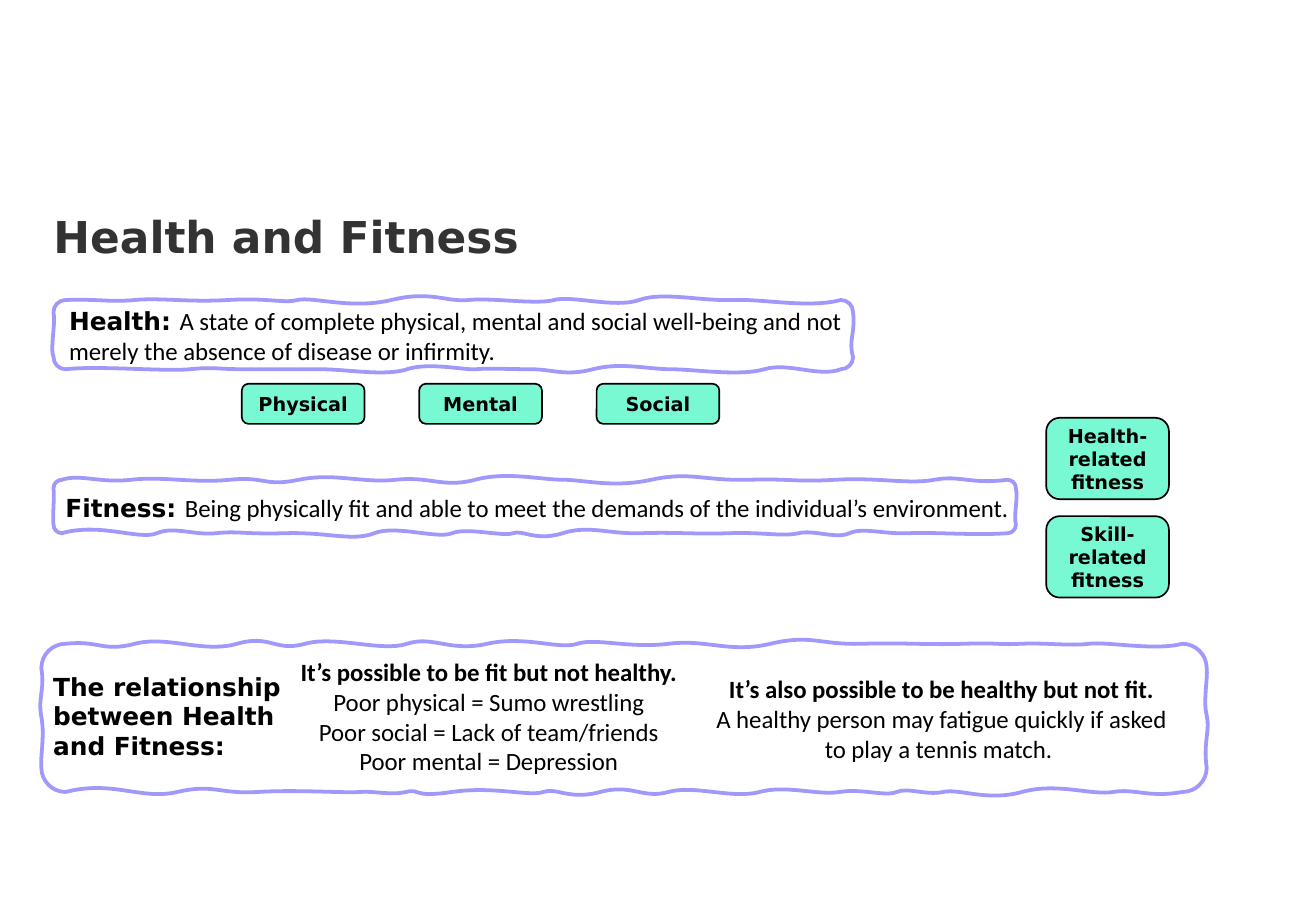
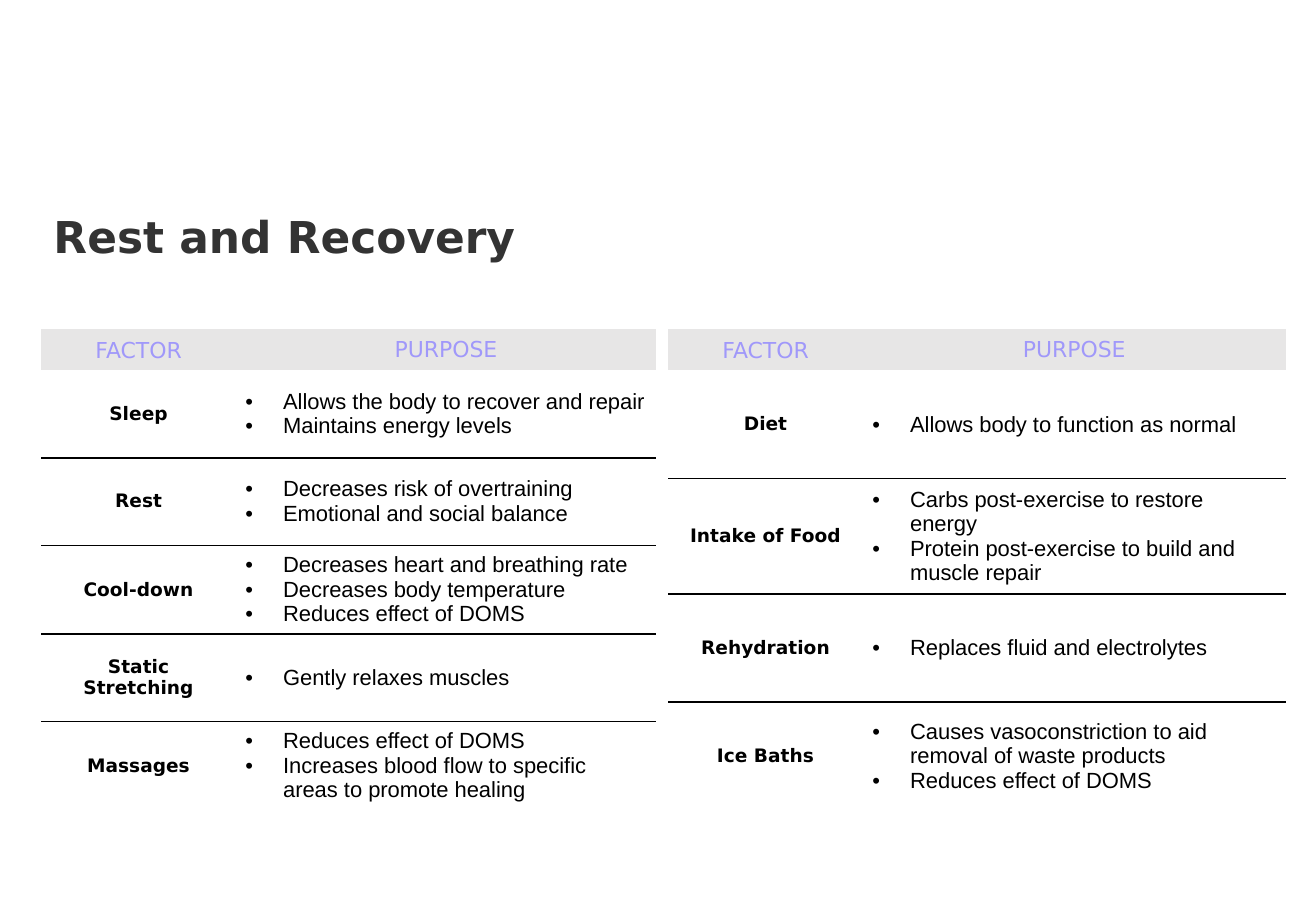
from lxml import etree
from pptx import Presentation
from pptx.dml.color import RGBColor
from pptx.enum import shapes, text
from pptx.oxml import ns
from pptx.util import Inches, Pt

# Shared look
BLACK = RGBColor(0x00, 0x00, 0x00)
DARK_GREY = RGBColor(0x33, 0x33, 0x33)
LIGHT_GREY = RGBColor(0xE7, 0xE6, 0xE6)
LILAC = RGBColor(0xA0, 0x98, 0xFA)
MINT = RGBColor(0x78, 0xF9, 0xD4)
HEADING_FONT, BODY_FONT, TABLE_FONT = "DejaVu Sans", "Calibri", "Arial"
BODY_SIZE = 14.63
CENTER = text.PP_ALIGN.CENTER
MIDDLE = text.MSO_ANCHOR.MIDDLE

# Frames: box, corner radius, then the top, right, bottom and left edges, clockwise.
# An edge is its first handle (position, outward offset) and smooth segments
# (second handle position, outward offset, end position).
HEALTH_FRAME = (0.44, 2.47, 7.02, 3.04), 0.1, [
    ((0.81, 0.01), [(0.9, -0.02, 1.11), (1.55, -0.02, 1.88), (2.33, -0.03, 2.45),
                    (2.89, -0.08, 3.22), (3.67, -0.02, 3.86), (4.42, -0.04, 4.56),
                    (5.07, -0.07, 5.26), (5.77, -0.01, 6.03), (6.65, -0.07, 6.92)]),
    ((2.75, 0.02), [(2.8, -0.04, 2.94)]),
    ((6.74, 0.07), [(6.49, -0.06, 6.29), (5.71, 0, 5.52), (5.11, -0.06, 4.88),
                    (4.55, 0, 4.37), (4.01, -0.01, 3.92), (3.53, -0.06, 3.35),
                    (2.85, 0, 2.64), (2.21, 0, 2), (1.76, -0.02, 1.56),
                    (0.8, -0.03, 0.54)]),
    ((2.87, 0.03), [(2.66, -0.02, 2.57)]),
]
FITNESS_FRAME = (0.44, 3.95, 8.36, 4.39), 0.07, [
    ((0.66, 0.05), [(0.82, -0.03, 1.08), (1.59, -0.03, 1.89), (2.17, -0.06, 2.46),
                    (2.98, -0.03, 3.26), (3.65, -0.07, 3.91), (4.45, 0, 4.63),
                    (5.04, -0.07, 5.36), (5.79, -0.01, 6.16), (6.52, -0.02, 6.88),
                    (7.48, -0.04, 7.69), (7.99, -0.04, 8.29)]),
    ((4.11, 0.02), [(4.23, -0.02, 4.32)]),
    ((8.02, 0.02), [(7.68, -0.01, 7.48), (7.1, -0.05, 6.99), (6.7, -0.03, 6.57),
                    (6.28, -0.01, 6), (5.55, -0.01, 5.28), (4.85, -0.07, 4.63),
                    (4.3, -0.03, 4.22), (3.84, -0.05, 3.72), (3.26, -0.07, 3.08),
                    (2.7, -0.01, 2.35), (1.96, -0.02, 1.78), (1.43, -0.06, 1.29),
                    (0.82, -0.09, 0.51)]),
    ((4.25, 0.01), [(4.1, -0.01, 4.02)]),
]
RELATIONSHIP_FRAME = (0.34, 5.3, 9.93, 6.52), 0.2, [
    ((0.82, 0.03), [(0.84, -0.07, 1.11), (1.67, -0.08, 1.95), (2.26, -0.07, 2.51),
                    (3.14, -0.07, 3.35), (3.7, -0.07, 4.01), (4.6, -0.05, 4.75),
                    (5.18, -0.04, 5.5), (6, -0.08, 6.34), (6.74, -0.01, 7.09),
                    (7.63, -0.01, 7.93), (8.2, -0.01, 8.4), (8.81, -0.02, 8.96),
                    (9.5, -0.06, 9.73)]),
    ((5.59, 0.01), [(5.77, -0.03, 5.89), (6.11, -0.03, 6.32)]),
    ((9.45, 0.05), [(9.34, -0.03, 9.16), (8.7, -0.08, 8.41), (7.9, -0.03, 7.76),
                    (7.47, -0.04, 7.38), (7.09, -0.03, 6.91), (6.47, -0.06, 6.25),
                    (5.71, -0.06, 5.5), (5.2, -0.07, 4.94), (4.58, -0.04, 4.47),
                    (4.06, -0.05, 3.72), (3.47, -0.03, 3.34), (3.08, -0.01, 2.96),
                    (2.44, -0.02, 2.12), (1.76, -0.07, 1.46), (0.93, -0.1, 0.54)]),
    ((6.23, 0.01), [(6.06, -0.03, 5.9), (5.68, -0.03, 5.5)]),
]

# Table contents: row height, factor, purposes
LEFT_ROWS = [
    (0.72, "Sleep", ["Allows the body to recover and repair", "Maintains energy levels"]),
    (0.72, "Rest", ["Decreases risk of overtraining", "Emotional and social balance"]),
    (0.73, "Cool-down", ["Decreases heart and breathing rate",
                         "Decreases body temperature", "Reduces effect of DOMS"]),
    (0.72, "Static Stretching", ["Gently relaxes muscles"]),
    (0.73, "Massages", ["Reduces effect of DOMS",
                        "Increases blood flow to specific areas to promote healing"]),
]
RIGHT_ROWS = [
    (0.89, "Diet", ["Allows body to function as normal"]),
    (0.95, "Intake of Food", ["Carbs post-exercise to restore energy",
                              "Protein post-exercise to build and muscle repair"]),
    (0.89, "Rehydration", ["Replaces fluid and electrolytes"]),
    (0.89, "Ice Baths", ["Causes vasoconstriction to aid removal of waste products",
                         "Reduces effect of DOMS"]),
]


# Text
def add_run(paragraph, content, size=BODY_SIZE, font=BODY_FONT, color=BLACK, bold=False):
    run = paragraph.add_run()
    run.text = content
    run.font.size, run.font.name = Pt(size), font
    run.font.bold, run.font.color.rgb = bold, color


def fill_frame(frame, paragraphs, align=None, bulleted=False):
    """Each paragraph is a list of (text, format) runs."""
    frame.word_wrap = True
    for index, runs in enumerate(paragraphs):
        paragraph = frame.add_paragraph() if index else frame.paragraphs[0]
        paragraph.alignment = align
        if bulleted:
            add_bullet(paragraph)
        for content, style in runs:
            add_run(paragraph, content, **style)


def add_bullet(paragraph):
    properties = paragraph._p.get_or_add_pPr()
    properties.set("marL", str(Inches(0.31)))
    properties.set("indent", str(-Inches(0.31)))
    etree.SubElement(properties, ns.qn("a:buFont")).set("typeface", "Arial")
    etree.SubElement(properties, ns.qn("a:buChar")).set("char", "•")


def add_text(slide, box, paragraphs, align=None):
    shape = slide.shapes.add_textbox(*map(Inches, box))
    shape.text_frame.auto_size = text.MSO_AUTO_SIZE.SHAPE_TO_FIT_TEXT
    fill_frame(shape.text_frame, paragraphs, align)


def add_titled_slide(presentation, title, width):
    slide = presentation.slides.add_slide(presentation.slide_layouts[5])
    shape = slide.shapes.title
    shape.left, shape.top = Inches(0.34), Inches(1.68)
    shape.width, shape.height = Inches(width), Inches(0.54)
    frame = shape.text_frame
    frame.auto_size = text.MSO_AUTO_SIZE.SHAPE_TO_FIT_TEXT
    frame.vertical_anchor = text.MSO_ANCHOR.TOP
    style = dict(size=26, font=HEADING_FONT, color=DARK_GREY, bold=True)
    fill_frame(frame, [[(title, style)]], text.PP_ALIGN.LEFT)
    return slide


# Shapes
def add_tag(slide, label, left, top, height):
    shape = slide.shapes.add_shape(shapes.MSO_SHAPE.ROUNDED_RECTANGLE,
                                   *map(Inches, (left, top, 1.01, height)))
    shape.shadow.inherit = False
    shape.fill.solid()
    shape.fill.fore_color.rgb = MINT
    shape.line.color.rgb, shape.line.width = BLACK, Pt(1)
    shape.text_frame.vertical_anchor = MIDDLE
    style = dict(size=11.4, font=HEADING_FONT, bold=True)
    fill_frame(shape.text_frame, [[(label, style)]], CENTER)


def toward(point, target, share=0.55):
    return tuple(a + share * (b - a) for a, b in zip(point, target))


def wavy_curves(box, radius, edges):
    """Cubic curves (first handle, second handle, end) around the box."""
    left, top, right, bottom = box
    # Fixed coordinate, outward sign, horizontal?, end corner, point after that corner
    sides = [(top, -1, True, (right, top), (right, top + radius)),
             (right, 1, False, (right, bottom), (right - radius, bottom)),
             (bottom, 1, True, (left, bottom), (left, bottom - radius)),
             (left, -1, False, (left, top), (left + radius, top))]
    for (base, sign, horizontal, corner, after), (handle, segments) in zip(sides, edges):
        def place(position, offset=0):
            across = base + sign * offset
            return (position, across) if horizontal else (across, position)

        first = place(*handle)
        for position, offset, end in segments:
            second, point = place(position, offset), place(end)
            yield first, second, point
            first = toward(second, point, 2)
        yield toward(point, corner), toward(after, corner), after


def add_wavy_frame(slide, box, radius, edges):
    curves = list(wavy_curves(box, radius, edges))
    start = curves[-1][-1]
    builder = slide.shapes.build_freeform(*map(Inches, start), scale=1.0)
    builder.add_line_segments([tuple(map(Inches, curve[-1])) for curve in curves])
    shape = builder.convert_to_shape()
    # Bend each straight segment into its cubic curve
    for line, curve in zip(list(shape._element.iter(ns.qn("a:lnTo"))), curves):
        bend = etree.Element(ns.qn("a:cubicBezTo"))
        for x, y in curve:
            etree.SubElement(bend, ns.qn("a:pt"), x=str(Inches(x) - shape.left),
                             y=str(Inches(y) - shape.top))
        line.getparent().replace(line, bend)
    shape.shadow.inherit = False
    shape.fill.background()
    shape.line.color.rgb, shape.line.width = LILAC, Pt(2.25)


# Tables
def set_borders(cell, ruled_sides):
    properties = cell._tc.get_or_add_tcPr()
    for index, side in enumerate("LRTB"):
        line = etree.Element(ns.qn("a:ln" + side), w=str(Pt(1)))
        if side in ruled_sides:
            fill = etree.SubElement(line, ns.qn("a:solidFill"))
            etree.SubElement(fill, ns.qn("a:srgbClr")).set("val", str(BLACK))
        else:
            etree.SubElement(line, ns.qn("a:noFill"))
        properties.insert(index, line)


def fill_cell(cell, paragraphs, align=None, bulleted=False, fill=None, ruled_sides=""):
    cell.vertical_anchor = MIDDLE
    cell.margin_left = cell.margin_right = Inches(0.08)
    cell.margin_top = cell.margin_bottom = Inches(0.04)
    if fill is None:
        cell.fill.background()
    else:
        cell.fill.solid()
        cell.fill.fore_color.rgb = fill
    set_borders(cell, ruled_sides)
    fill_frame(cell.text_frame, paragraphs, align, bulleted)


def add_factor_table(slide, left, purpose_width, rows):
    widths = 1.6, purpose_width
    heights = [0.34] + [height for height, *_ in rows]
    table = slide.shapes.add_table(len(heights), 2, Inches(left), Inches(2.71),
                                   Inches(sum(widths)), Inches(sum(heights))).table
    table.first_row = table.horz_banding = False
    for column, width in zip(table.columns, widths):
        column.width = Inches(width)
    for row, height in zip(table.rows, heights):
        row.height = Inches(height)
    header = dict(size=13, font=HEADING_FONT, color=LILAC)
    for column, label in enumerate(("FACTOR", "PURPOSE")):
        fill_cell(table.cell(0, column), [[(label, header)]], CENTER, fill=LIGHT_GREY)
    factor_heading = table.cell(0, 0).text_frame.paragraphs[0]
    factor_heading.line_spacing, factor_heading.space_after = 1.07, Pt(8)
    factor_style = dict(size=11, font=HEADING_FONT, bold=True)
    purpose_style = dict(size=13, font=TABLE_FONT)
    for index, (_, factor, purposes) in enumerate(rows, 1):
        ruled = ("T" if index > 1 else "") + ("B" if index < len(rows) else "")
        fill_cell(table.cell(index, 0), [[(factor, factor_style)]], CENTER, ruled_sides=ruled)
        fill_cell(table.cell(index, 1), [[(item, purpose_style)] for item in purposes],
                  bulleted=True, ruled_sides=ruled)


# Slides
def build_health_slide(presentation):
    slide = add_titled_slide(presentation, "Health and Fitness", 7.23)
    term, strong = dict(font=HEADING_FONT, bold=True), dict(bold=True)
    add_text(slide, (0.47, 2.47, 6.55, 0.59), [[
        ("Health: ", term),
        ("A state of complete physical, mental and social well-being and not merely "
         "the absence of disease or infirmity.", {})]])
    add_text(slide, (0.44, 4.01, 8.01, 0.35), [[
        ("Fitness: ", term),
        ("Being physically fit and able to meet the demands of the individual’s "
         "environment.", {})]])
    for index, label in enumerate(("Physical", "Mental", "Social")):
        add_tag(slide, label, 1.99 + 1.46 * index, 3.16, 0.33)
    for index, label in enumerate(("Health-related fitness", "Skill-related fitness")):
        add_tag(slide, label, 8.61, 3.44 + 0.81 * index, 0.67)
    add_wavy_frame(slide, *HEALTH_FRAME)
    add_wavy_frame(slide, *FITNESS_FRAME)
    # Relationship panel
    add_text(slide, (0.34, 5.48, 2.2, 0.84),
             [[("The relationship between Health and Fitness:", term)]])
    add_text(slide, (2.26, 5.36, 3.52, 1.09), [
        [("It’s possible to be fit but not healthy.", strong)],
        [("Poor physical = Sumo wrestling", {})],
        [("Poor social = Lack of team/friends", {})],
        [("Poor mental = Depression", {})]], CENTER)
    add_text(slide, (5.78, 5.5, 3.93, 0.84), [
        [("It’s also possible to be healthy but not fit.", strong)],
        [("A healthy person may fatigue quickly if asked to play a tennis match. ", {})]],
        CENTER)
    add_wavy_frame(slide, *RELATIONSHIP_FRAME)


def build_recovery_slide(presentation):
    slide = add_titled_slide(presentation, "Rest and Recovery", 6.94)
    add_factor_table(slide, 0.34, 3.46, LEFT_ROWS)
    add_factor_table(slide, 5.5, 3.48, RIGHT_ROWS)


def main():
    presentation = Presentation()
    presentation.slide_width, presentation.slide_height = Inches(10.83), Inches(7.5)
    build_health_slide(presentation)
    build_recovery_slide(presentation)
    presentation.save("out.pptx")


if __name__ == "__main__":
    main()
